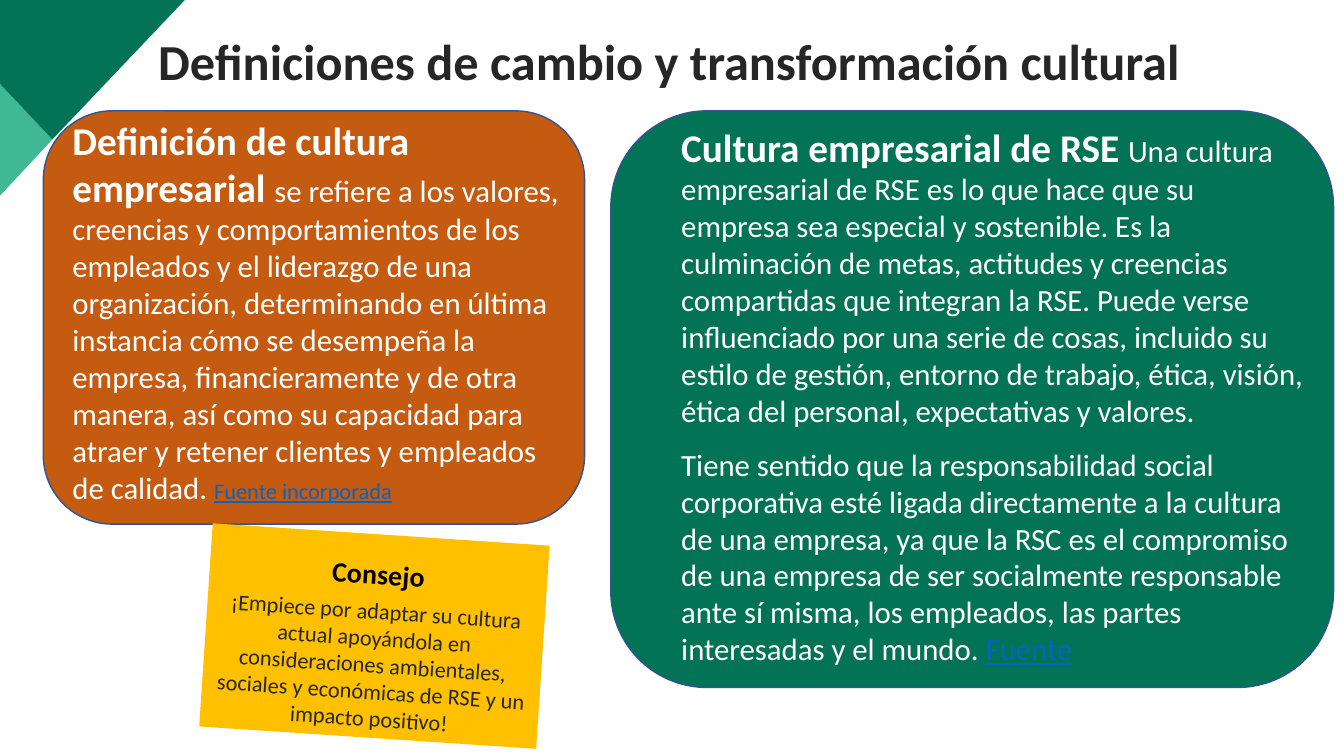
"""Build the slide that defines change and cultural transformation."""
from dataclasses import dataclass

from pptx import Presentation
from pptx.dml.color import RGBColor
from pptx.enum.shapes import MSO_SHAPE as Shp
from pptx.enum.text import MSO_ANCHOR as Anchor, PP_ALIGN as Align
from pptx.util import Emu, Inches, Pt

COLS, ROWS = 160, 90
W, H = Inches(13.333), Inches(7.5)
FONT = "Calibri"
COLORS = {
    "green": "027354", "mint": "40B894", "orange": "C55A11", "yellow": "FFC000",
    "edge": "325491", "ink": "262626", "black": "000000", "white": "FFFFFF",
    "link": "0563C1",
}


@dataclass(frozen=True)
class Box:
    col: float
    row: float
    cols: float
    rows: float

    def emu(self) -> tuple[Emu, Emu, Emu, Emu]:
        return x(self.col), y(self.row), x(self.cols), y(self.rows)


@dataclass(frozen=True)
class Run:
    text: str
    size: int
    color: str = "white"
    bold: bool = False
    underline: bool = False


@dataclass(frozen=True)
class Para:
    runs: tuple[Run, ...]
    before: float = 0
    spacing: float = 1
    align: Align = Align.LEFT


@dataclass(frozen=True)
class Corner:
    color: str
    points: tuple[tuple[float, float], ...]


@dataclass(frozen=True)
class Panel:
    box: Box
    color: str
    kind: Shp = Shp.ROUNDED_RECTANGLE
    edge: str = ""
    rotation: float = 0


@dataclass(frozen=True)
class Label:
    box: Box
    paras: tuple[Para, ...]


CORNERS = (
    Corner("mint", ((0, 10), (6.24, 16.6), (0, 23.3))),
    Corner("green", ((0, 0), (22, 0), (6.24, 16.6), (0, 10))),
)
PANELS = (
    Panel(Box(5.16, 13.2, 64.44, 49.2), "orange", edge="edge"),
    Panel(Box(72.72, 13.2, 86.04, 68.64), "green", edge="edge"),
)
LABELS = (
    Label(Box(17.64, 3.84, 139.08, 12.48), (
        Para((Run("Definiciones de cambio y transformación cultural", 36, "ink", True),),
             spacing=0.9),
    )),
    Label(Box(7.44, 13.2, 60.48, 42.84), (
        Para((
            Run("Definición de cultura empresarial ", 28, bold=True),
            Run("se refiere a los valores, creencias y comportamientos de los empleados "
                "y el liderazgo de una organización, determinando en última instancia "
                "cómo se desempeña la empresa, financieramente y de otra manera, así como "
                "su capacidad para atraer y retener clientes y empleados de calidad. ", 22),
            Run("Fuente incorporada", 16, "link", underline=True),
        )),
    )),
    Label(Box(79.92, 14.04, 76.92, 37.56), (
        Para((
            Run("Cultura empresarial de RSE ", 28, bold=True),
            Run("Una cultura empresarial de RSE es lo que hace que su empresa sea especial "
                "y sostenible. Es la culminación de metas, actitudes y creencias "
                "compartidas que integran la RSE. Puede verse influenciado por una serie "
                "de cosas, incluido su estilo de gestión, entorno de trabajo, ética, "
                "visión, ética del personal, expectativas y valores.", 22),
        )),
        Para((
            Run("Tiene sentido que la responsabilidad social corporativa esté ligada "
                "directamente a la cultura de una empresa, ya que la RSC es el compromiso "
                "de una empresa de ser socialmente responsable ante sí misma, los "
                "empleados, las partes interesadas y el mundo. ", 22),
            Run("Fuente", 22, "link", underline=True),
        ), before=12),
    )),
)
TIP = Panel(Box(24.48, 63.6, 40.2, 24.24), "yellow", Shp.RECTANGLE, rotation=3.8)
TIP_PARAS = (
    Para((Run("Consejo", 20, "black", True),), align=Align.CENTER),
    Para((Run("¡Empiece por adaptar su cultura actual apoyándola en consideraciones "
              "ambientales, sociales y económicas de RSE y un impacto positivo!", 16, "ink"),),
         before=5, align=Align.CENTER),
)


def x(col: float) -> Emu:
    return Emu(round(W * col / COLS))


def y(row: float) -> Emu:
    return Emu(round(H * row / ROWS))


def rgb(name: str) -> RGBColor:
    return RGBColor.from_string(COLORS[name])


def paint(sp, color: str, edge: str = "") -> None:
    sp.shadow.inherit = False
    sp.fill.solid()
    sp.fill.fore_color.rgb = rgb(color)
    if edge:
        sp.line.color.rgb = rgb(edge)
        sp.line.width = Pt(1)
    else:
        sp.line.fill.background()


def draw_corner(shapes, corner: Corner) -> None:
    start, *rest = [(x(c), y(r)) for c, r in corner.points]
    builder = shapes.build_freeform(*start)
    builder.add_line_segments(rest, close=True)
    paint(builder.convert_to_shape(), corner.color)


def draw_panel(shapes, panel: Panel):
    sp = shapes.add_shape(panel.kind, *panel.box.emu())
    sp.rotation = panel.rotation
    paint(sp, panel.color, panel.edge)
    return sp


def write(tf, paras: tuple[Para, ...]) -> None:
    tf.word_wrap = True
    tf.vertical_anchor = Anchor.TOP
    for i, para in enumerate(paras):
        p = tf.add_paragraph() if i else tf.paragraphs[0]
        p.alignment = para.align
        p.space_before = Pt(para.before)
        p.line_spacing = para.spacing
        for run in para.runs:
            r = p.add_run()
            r.text = run.text
            r.font.name = FONT
            r.font.size = Pt(run.size)
            r.font.bold = run.bold
            r.font.underline = run.underline
            r.font.color.rgb = rgb(run.color)


def main() -> None:
    prs = Presentation()
    prs.slide_width, prs.slide_height = W, H
    shapes = prs.slides.add_slide(prs.slide_layouts[6]).shapes
    for corner in CORNERS:
        draw_corner(shapes, corner)
    for panel in PANELS:
        draw_panel(shapes, panel)
    for label in LABELS:
        write(shapes.add_textbox(*label.box.emu()).text_frame, label.paras)
    tf = draw_panel(shapes, TIP).text_frame
    tf.margin_top = Inches(0.22)
    write(tf, TIP_PARAS)
    prs.save("out.pptx")


if __name__ == "__main__":
    main()
